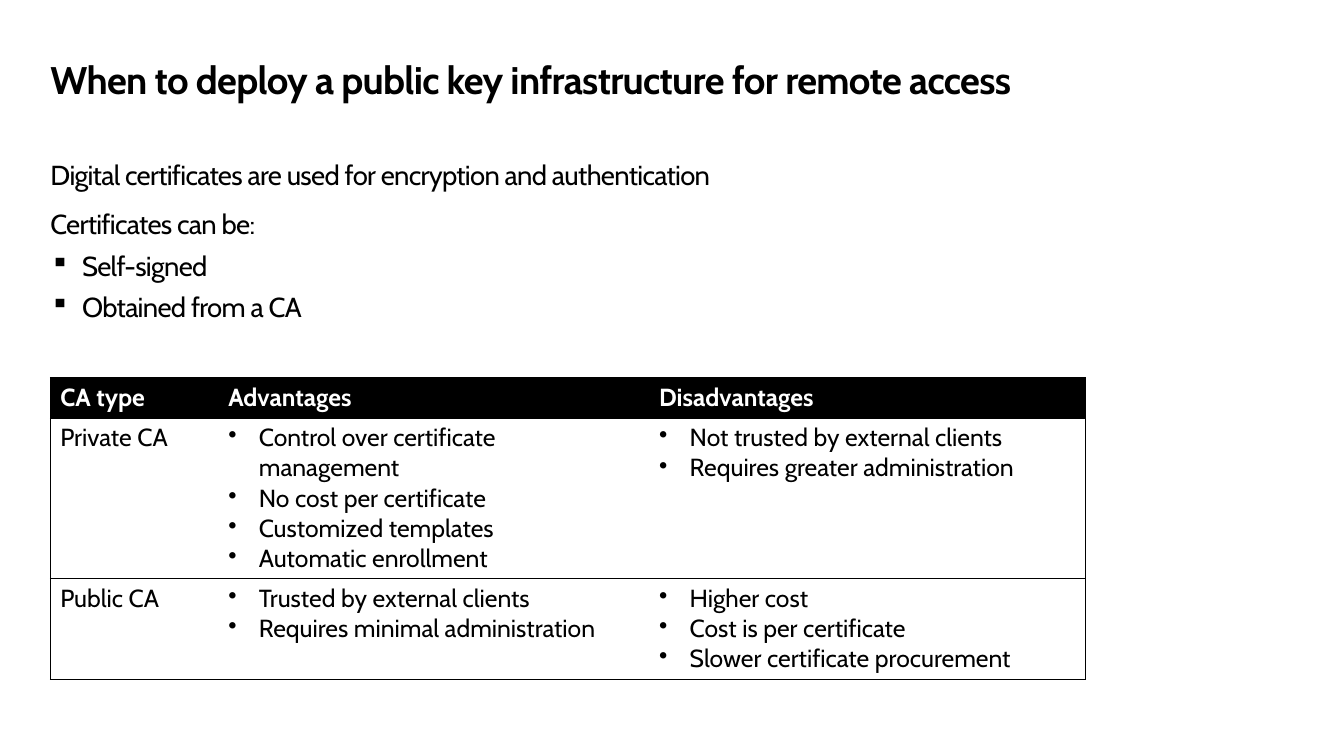
from dataclasses import dataclass

from lxml.etree import SubElement
from pptx import Presentation
from pptx.dml.color import RGBColor
from pptx.enum.text import MSO_ANCHOR, MSO_AUTO_SIZE, PP_ALIGN
from pptx.oxml.ns import qn
from pptx.util import Emu, Pt

EMU_PER_PX = 9144


@dataclass(frozen=True)
class Theme:
    font: str = "Cabin"
    ink: str = "000000"
    paper: str = "FFFFFF"
    title_size: int = 28
    body_size: int = 20
    table_size: int = 18
    tracking: int = -50
    border: float = 0.75


def px(length):
    return Emu(length * EMU_PER_PX)


class SlideBuilder:
    def __init__(self, deck, theme):
        self.theme = theme
        self.page = deck.slides.add_slide(deck.slide_layouts[5])
        self.page.background.fill.solid()
        self.page.background.fill.fore_color.rgb = RGBColor.from_string(theme.paper)

    def add_run(self, para, text, size, color=None, bold=False, tracking=0):
        span = para.add_run()
        span.text = text
        span.font.name = self.theme.font
        span.font.size = Pt(size)
        span.font.bold = bold
        span.font.color.rgb = RGBColor.from_string(color or self.theme.ink)
        if tracking:
            span._r.get_or_add_rPr().set("spc", str(tracking))

    def add_bullet(self, para, character, indent, percent=100):
        properties = para._p.get_or_add_pPr()
        properties.set("marL", str(px(indent)))
        properties.set("indent", str(-px(indent)))
        SubElement(properties, qn("a:buSzPct"), val=str(percent * 1000))
        SubElement(properties, qn("a:buChar"), char=character)

    def prepare_frame(self, box, bottom):
        frame = box.text_frame
        frame.word_wrap = True
        frame.auto_size = MSO_AUTO_SIZE.NONE
        frame.vertical_anchor = MSO_ANCHOR.TOP
        frame.margin_left = frame.margin_top = 0
        frame.margin_right, frame.margin_bottom = px(10), px(bottom)
        return frame

    def add_title(self, text, left, top, width, height):
        title = self.page.shapes.title
        title.left, title.top, title.width, title.height = map(px, (left, top, width, height))
        para = self.prepare_frame(title, 0).paragraphs[0]
        para.alignment = PP_ALIGN.LEFT
        para.line_spacing = 0.9
        self.add_run(para, text, self.theme.title_size, bold=True, tracking=self.theme.tracking)

    def add_body(self, lines, left, top, width, height):
        box = self.page.shapes.add_textbox(*map(px, (left, top, width, height)))
        frame = self.prepare_frame(box, 5)
        for index, (text, bulleted) in enumerate(lines):
            para = frame.add_paragraph() if index else frame.paragraphs[0]
            para.space_before = Pt(6 if bulleted else 12)
            if bulleted:
                para.level = 1
                self.add_bullet(para, "▪", 32, 95)
            self.add_run(para, text, self.theme.body_size, tracking=self.theme.tracking)

    def set_borders(self, cell, visible):
        properties = cell._tc.get_or_add_tcPr()
        for index, side in enumerate("LRTB"):
            line = SubElement(properties, qn(f"a:ln{side}"), w=str(Pt(self.theme.border)))
            if side in visible:
                fill = SubElement(line, qn("a:solidFill"))
                SubElement(fill, qn("a:srgbClr"), val=self.theme.ink)
            else:
                SubElement(line, qn("a:noFill"))
            properties.insert(index, line)

    def fill_cell(self, cell, lines, header, bulleted):
        theme = self.theme
        cell.fill.solid()
        cell.fill.fore_color.rgb = RGBColor.from_string(theme.ink if header else theme.paper)
        for index, text in enumerate(lines):
            para = cell.text_frame.add_paragraph() if index else cell.text_frame.paragraphs[0]
            if bulleted:
                self.add_bullet(para, "•", 31)
            self.add_run(para, text, theme.table_size, theme.paper if header else theme.ink, header)

    def add_table(self, rows, left, top, widths, heights):
        bounds = map(px, (left, top, sum(widths), sum(heights)))
        table = self.page.shapes.add_table(len(rows), len(widths), *bounds).table
        table.horz_banding = False
        for column, width in zip(table.columns, widths):
            column.width = px(width)
        for row, height in zip(table.rows, heights):
            row.height = px(height)
        last = len(widths) - 1
        for row_index, row in enumerate(rows):
            for column_index, lines in enumerate(row):
                cell = table.cell(row_index, column_index)
                header = row_index == 0
                self.fill_cell(cell, lines, header, not header and column_index > 0)
                edges = {0: "L", last: "R"}.get(column_index, "")
                self.set_borders(cell, "TB" + edges)


BODY_LINES = [
    ("Digital certificates are used for encryption and authentication", False),
    ("Certificates can be:", False),
    ("Self-signed", True),
    ("Obtained from a CA", True),
]

CA_ROWS = [
    [["CA type"], ["Advantages"], ["Disadvantages"]],
    [
        ["Private CA"],
        [
            "Control over certificate management",
            "No cost per certificate",
            "Customized templates",
            "Automatic enrollment",
        ],
        ["Not trusted by external clients", "Requires greater administration"],
    ],
    [
        ["Public CA"],
        ["Trusted by external clients", "Requires minimal administration"],
        ["Higher cost", "Cost is per certificate", "Slower certificate procurement"],
    ],
]


def main():
    deck = Presentation()
    deck.slide_width, deck.slide_height = px(1360), px(765)
    builder = SlideBuilder(deck, Theme())
    builder.add_title(
        "When to deploy a public key infrastructure for remote access", 51, 62, 1261, 45
    )
    builder.add_body(BODY_LINES, 51, 160, 1262, 556)
    builder.add_table(CA_ROWS, 51, 382, [170, 436, 441], [41, 162, 102])
    deck.save("out.pptx")


if __name__ == "__main__":
    main()
